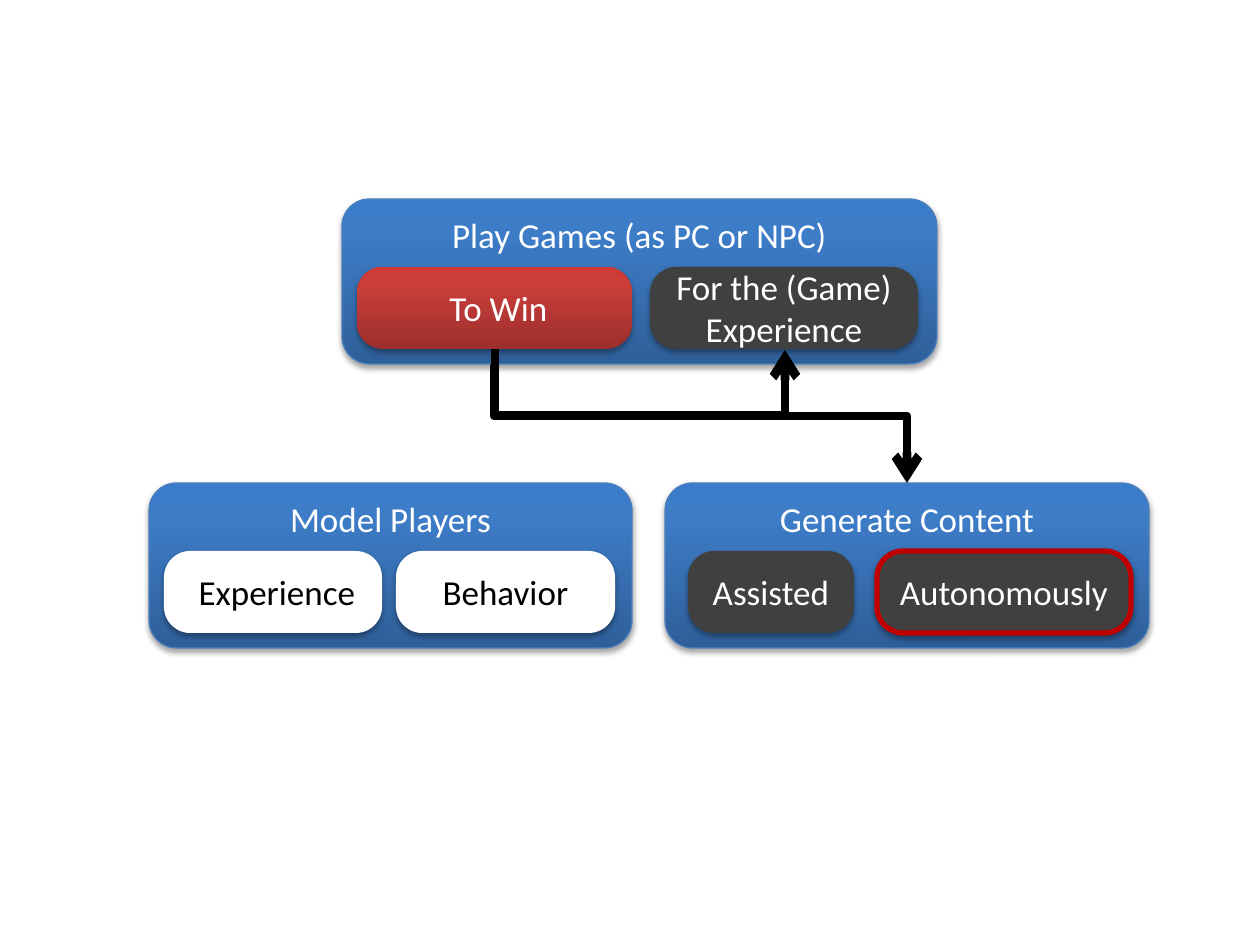
from lxml.etree import SubElement as Sub
from pptx import Presentation
from pptx.dml.color import RGBColor as Rgb
from pptx.enum.shapes import MSO_CONNECTOR as Conn, MSO_SHAPE as Shape
from pptx.enum.text import MSO_ANCHOR as Anchor, PP_ALIGN as Align
from pptx.oxml.ns import qn
from pptx.util import Emu, Pt

COLORS = {"white": "FFFFFF", "black": "000000", "dark": "404040",
          "edge": "4B7EBC", "ring": "C00000"}
BLENDS = {"blue": ("2F5F99", "3D7CC7", "3A7CCB"),
          "red": ("9C2F2D", "CB3E3A", "CE3B37")}
STOPS = (0, 80, 100)


class Deck:
    font = "Calibri"
    size = 20
    scale = 914400 / 126

    def __init__(self, wide, high):
        self.file = Presentation()
        self.file.slide_width = self.px(wide)
        self.file.slide_height = self.px(high)
        self.slide = self.file.slides.add_slide(self.file.slide_layouts[6])

    def px(self, n):
        return Emu(round(n * self.scale))

    def paint(self, shape, fill):
        if fill not in BLENDS:
            shape.fill.solid()
            shape.fill.fore_color.rgb = Rgb.from_string(COLORS[fill])
            return
        shape.fill.gradient()
        shape.fill.gradient_angle = 90
        stops = shape.element.spPr.find(".//" + qn("a:gsLst"))
        for old in list(stops):
            stops.remove(old)
        for pos, color in zip(STOPS, BLENDS[fill]):
            stop = Sub(stops, qn("a:gs"), pos=str(pos * 1000))
            Sub(stop, qn("a:srgbClr"), val=color)

    def shade(self, shape):
        shape.shadow.inherit = False
        effects = shape.element.spPr.find(qn("a:effectLst"))
        outer = Sub(effects, qn("a:outerShdw"), blurRad="40000", dist="23000",
                    dir="5400000", rotWithShape="0")
        color = Sub(outer, qn("a:srgbClr"), val=COLORS["black"])
        Sub(color, qn("a:alpha"), val="35000")

    def box(self, area, text, fill, ink="white", line=None, width=0):
        shape = self.slide.shapes.add_shape(
            Shape.ROUNDED_RECTANGLE, *map(self.px, area))
        self.paint(shape, fill)
        if line:
            shape.line.color.rgb = Rgb.from_string(COLORS[line])
            shape.line.width = Pt(width)
        else:
            shape.line.fill.background()
        self.shade(shape)
        para = shape.text_frame.paragraphs[0]
        para.alignment = Align.CENTER
        run = para.add_run()
        run.text = text
        run.font.name = self.font
        run.font.size = Pt(self.size)
        run.font.color.rgb = Rgb.from_string(COLORS[ink])
        return shape

    def panel(self, left, top, wide, title):
        shape = self.box((left, top, wide, 165), title, "blue",
                         line="edge", width=0.75)
        shape.text_frame.vertical_anchor = Anchor.TOP

    def pill(self, left, top, wide, text, fill, **style):
        shape = self.box((left, top + 68, wide, 82), text, fill, **style)
        shape.adjustments[0] = 0.32
        shape.text_frame.vertical_anchor = Anchor.MIDDLE

    def elbow(self, start, end, bend):
        (x1, y1), (x2, y2) = start, end
        wide, high = y2 - y1, x2 - x1
        left, top = (x1 + x2 - wide) / 2, (y1 + y2 - high) / 2
        link = self.slide.shapes.add_connector(
            Conn.ELBOW, *map(self.px, (left, top, left + wide, top + high)))
        link.line.color.rgb = Rgb.from_string(COLORS["black"])
        link.line.width = Pt(5)
        props = link.element.spPr
        frame = props.find(qn("a:xfrm"))
        frame.set("rot", "16200000")
        frame.set("flipH", "1")
        ratio = round((bend - y1) / wide * 100000)
        Sub(props.find(".//" + qn("a:avLst")), qn("a:gd"),
            name="adj1", fmla=f"val {ratio}")
        Sub(props.find(qn("a:ln")), qn("a:tailEnd"), type="arrow")
        Sub(props, qn("a:effectLst"))


def main():
    deck = Deck(1260, 945)
    high, low, bend = 199, 483, 416

    deck.panel(149, low, 483, "Model Players")
    deck.pill(164, low, 218, " Experience", "white", ink="black")
    deck.pill(396, low, 219, "Behavior", "white", ink="black")

    deck.panel(665, low, 484, "Generate Content")
    deck.pill(877, low, 254, "Autonomously", "dark", line="ring", width=3)
    deck.pill(688, low, 166, "Assisted", "dark")
    deck.elbow((494, 349), (907, low), bend)

    deck.panel(342, high, 595, "Play Games (as PC or NPC)")
    deck.pill(357, high, 275, " To Win", "red")
    deck.pill(650, high, 268, "For the (Game) Experience", "dark")
    deck.elbow((495, 349), (785, 350), bend)

    deck.file.save("out.pptx")


if __name__ == "__main__":
    main()
